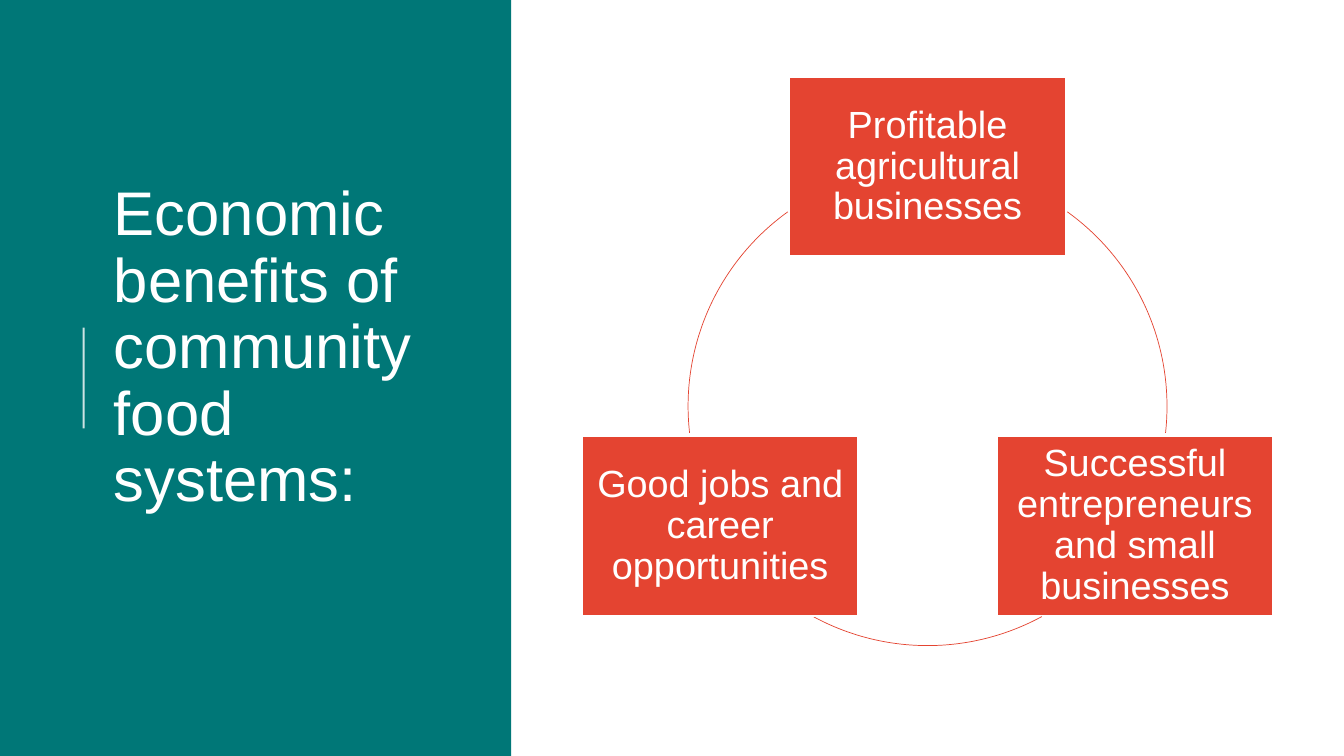
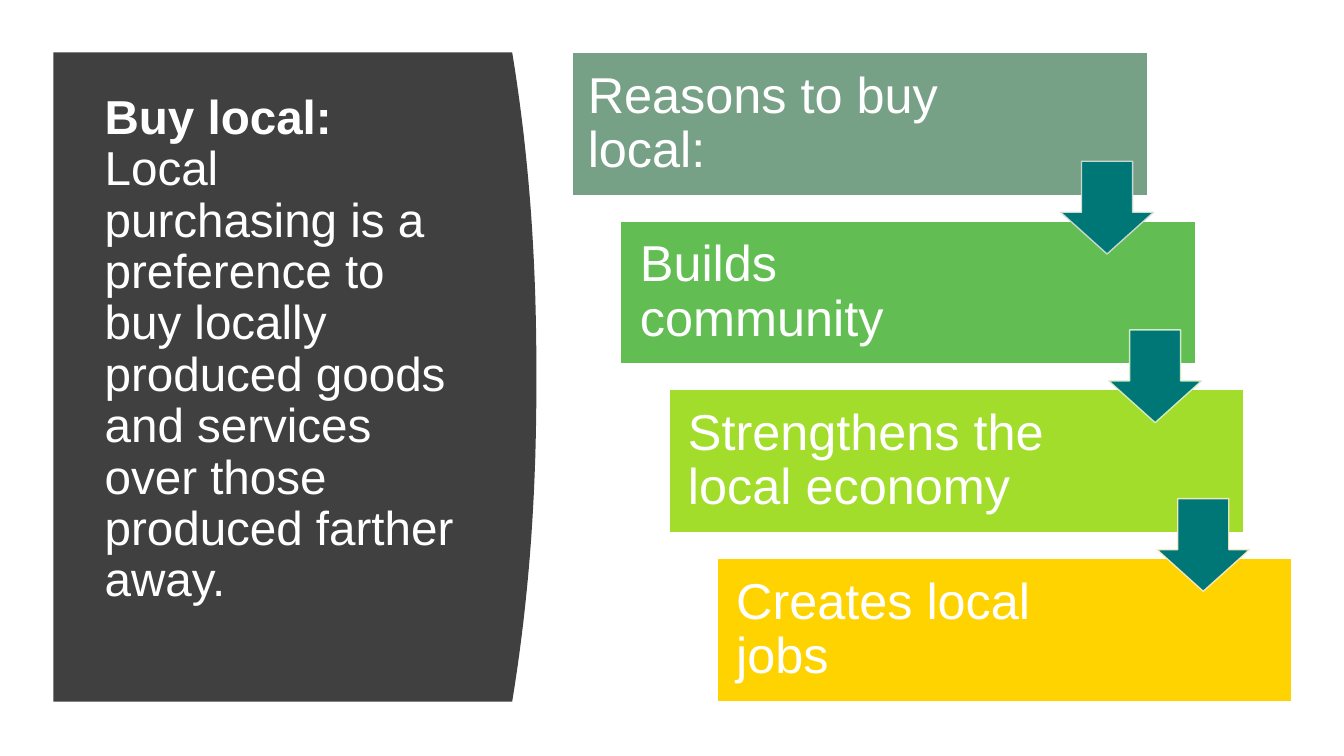
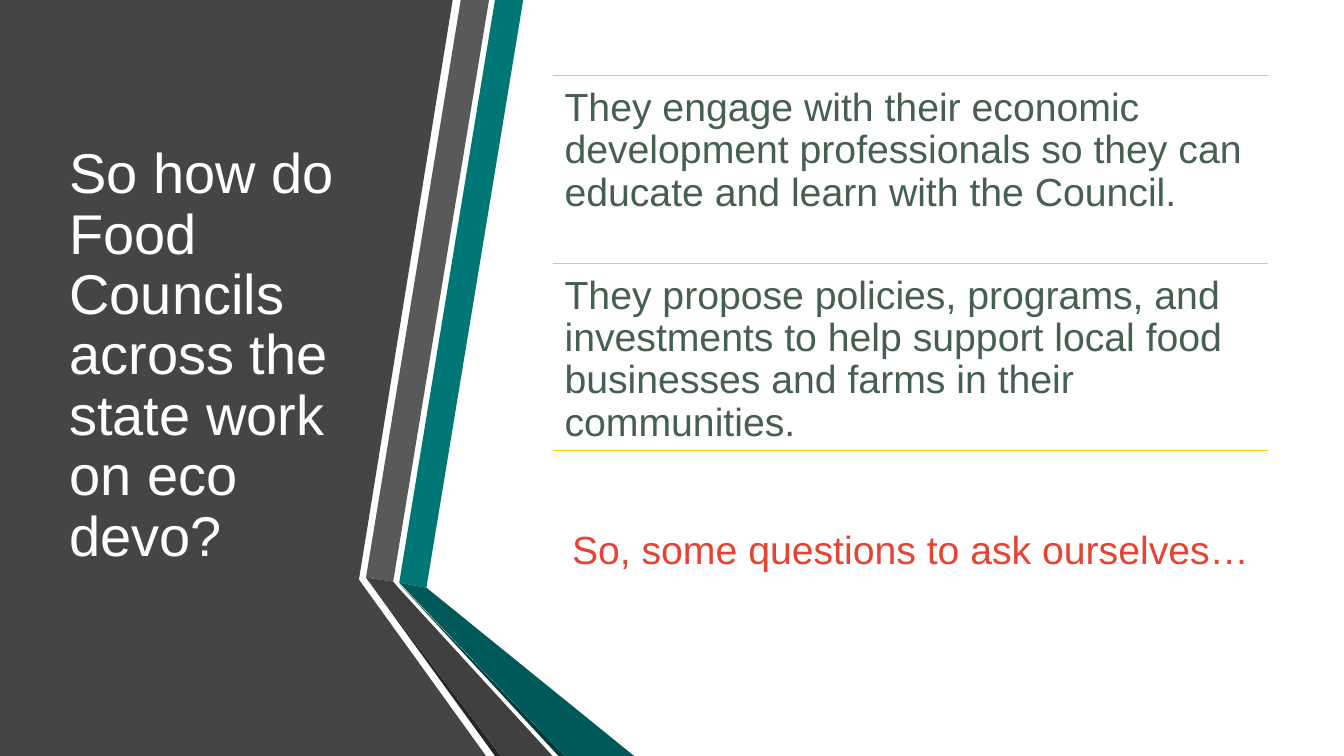
import math
import lxml.etree
import pptx
import pptx.dml.color
import pptx.enum.shapes
import pptx.enum.text
import pptx.oxml.ns
import pptx.util

SHAPE = pptx.enum.shapes.MSO_SHAPE
ANCHOR = pptx.enum.text.MSO_ANCHOR
ALIGN = pptx.enum.text.PP_ALIGN
WIDE, HIGH = 13.33, 7.5


class Theme:
    font = "Arial"
    white, teal, red, gold = "FFFFFF", "007777", "E44431", "FFD300"
    dark, slate, moss = "404040", "454545", "455F51"
    steps = ["77A186", "62BE52", "A1DD2A", gold]
    edges = ["D6E0D9", "E0F2CF", "FFEFCB"]
    cycle_size, step_size, point_size = 27, 36, 28
    spacing = 0.9


# Content
BENEFITS = {
    "title": "Economic benefits of community food systems:",
    "cycle": [
        "Profitable agricultural businesses",
        "Successful entrepreneurs and small businesses",
        "Good jobs and career opportunities",
    ],
}
LOCAL = {
    "title": [
        "Buy local:",
        "Local purchasing is a preference to buy locally produced goods "
        "and services over those produced farther away.",
    ],
    "steps": [
        "Reasons to buy local:",
        "Builds community",
        "Strengthens the local economy",
        "Creates local jobs",
    ],
}
COUNCILS = {
    "title": "So how do Food Councils across the state work on eco devo?",
    "points": [
        "They engage with their economic development professionals so they "
        "can educate and learn with the Council.",
        "They propose policies, programs, and investments to help support "
        "local food businesses and farms in their communities.",
    ],
    "close": "So, some questions to ask ourselves…",
}
RIBBONS = [
    (Theme.slate, [(0, 0), (4.49, 0), (3.56, 5.75), (4.82, HIGH), (0, HIGH)]),
    (Theme.teal, [(3.96, 5.78), (4.23, 5.83), (5.19, 0), (4.91, 0)]),
    ("595959", [(4.85, 0), (4.57, 0), (3.63, 5.73), (3.9, 5.77)]),
    ("262626", [(3.63, 5.73), (4.91, HIGH), (4.97, HIGH)]),
    ("003B3C", [(3.96, 5.79), (5.54, HIGH), (5.6, HIGH)]),
    ("005959", [(3.96, 5.78), (5.6, HIGH), (6.29, HIGH), (4.23, 5.83)]),
    (Theme.dark, [(3.63, 5.73), (4.97, HIGH), (5.48, HIGH), (3.95, 5.83), (3.9, 5.77)]),
]


def inch(*nums):
    return [pptx.util.Inches(num) for num in nums]


def rgb(code):
    return pptx.dml.color.RGBColor.from_string(code)


def stroke(item, color, width, alpha=100):
    item.line.color.rgb = rgb(color)
    item.line.width = pptx.util.Pt(width)
    if alpha < 100:
        tint = item.element.spPr.find(".//" + pptx.oxml.ns.qn("a:ln")).find(
            ".//" + pptx.oxml.ns.qn("a:srgbClr"))
        lxml.etree.SubElement(tint, pptx.oxml.ns.qn("a:alpha"), val=str(alpha * 1000))


def paint(item, fill):
    """Set a flat fill, or none, with no outline or shadow."""
    item.shadow.inherit = False
    if fill:
        item.fill.solid()
        item.fill.fore_color.rgb = rgb(fill)
    else:
        item.fill.background()
    item.line.fill.background()
    return item


def shape(slide, kind, box, fill):
    return paint(slide.shapes.add_shape(kind, *inch(*box)), fill)


def outline(slide, points, fill):
    first, *rest = [inch(*point) for point in points]
    maker = slide.shapes.build_freeform(*first, scale=1.0)
    maker.add_line_segments(rest, close=True)
    return paint(maker.convert_to_shape(), fill)


def rule(slide, start, end, color, width, alpha=100):
    line = slide.shapes.add_connector(
        pptx.enum.shapes.MSO_CONNECTOR.STRAIGHT, *inch(*start, *end))
    stroke(line, color, width, alpha)
    lxml.etree.SubElement(line.element.spPr, pptx.oxml.ns.qn("a:effectLst"))


def write(item, lines, size, color=Theme.white, inset=(0.1, 0.05, 0.1, 0.05),
          anchor=ANCHOR.MIDDLE, align=ALIGN.LEFT):
    """Fill a text frame; inset is left, top, right, bottom."""
    frame = item.text_frame
    frame.word_wrap = True
    frame.vertical_anchor = anchor
    (frame.margin_left, frame.margin_top,
     frame.margin_right, frame.margin_bottom) = inch(*inset)
    frame.text = "\n".join(lines)
    for para in frame.paragraphs:
        para.alignment = align
        para.line_spacing = Theme.spacing
        para.font.name = Theme.font
        para.font.size = pptx.util.Pt(size)
        para.font.color.rgb = rgb(color)
    return frame


def label(slide, box, lines, size, **style):
    return write(slide.shapes.add_textbox(*inch(*box)), lines, size, **style)


def benefits(slide):
    shape(slide, SHAPE.RECTANGLE, (0, 0, 5.07, HIGH), Theme.teal)
    label(slide, (1.03, 0.78, 3.69, 5.36), [BENEFITS["title"]], 44)
    rule(slide, (0.83, 4.25), (0.83, 3.25), Theme.white, 1.5, 80)

    mid_x, mid_y, radius = 9.2, 4.03, 2.375
    wide, high = 2.74, 1.78
    ring = (mid_x - radius, mid_y - radius, 2 * radius, 2 * radius)
    arcs = [(305.7, 6.4), (61.5, 118.5), (173.6, 234.3)]
    for i, (text, arc) in enumerate(zip(BENEFITS["cycle"], arcs)):
        angle = math.radians(120 * i - 90)
        left = mid_x + radius * math.cos(angle) - wide / 2
        top = mid_y + radius * math.sin(angle) - high / 2
        card = shape(slide, SHAPE.RECTANGLE, (left, top, wide, high), Theme.red)
        stroke(card, Theme.white, 1.5)
        write(card, [text], Theme.cycle_size, inset=(0.11,) * 4, align=ALIGN.CENTER)
        curve = shape(slide, SHAPE.ARC, ring, None)
        for n, degree in enumerate(arc):
            curve.adjustments[n] = degree * 0.6  # 60000ths of a degree over 100000
        stroke(curve, Theme.red, 0.5)


def local(slide):
    left, top, edge, bulge, high, cuts = 0.53, 0.52, 5.08, 0.24, 6.44, 40
    side = [(edge + bulge * (1 - abs(2 * n / cuts - 1) ** 2.2), top + high * n / cuts)
            for n in range(cuts + 1)]
    outline(slide, [(left, top), *side, (left, top + high)], Theme.dark)
    title = label(slide, (0.94, 1.11, 3.74, 4.73), LOCAL["title"], 34)
    title.paragraphs[0].font.bold = True

    wide, tall, text_wide = 5.7, 1.42, 3.9
    spots = [(5.68 + 0.477 * i, 0.52 + 1.673 * i) for i in range(len(LOCAL["steps"]))]
    for i, (spot, text) in enumerate(zip(spots, LOCAL["steps"])):
        step = shape(slide, SHAPE.RECTANGLE, (*spot, wide, tall), Theme.steps[i])
        stroke(step, Theme.white, 1)
        pad = 0.19 if i else 0.15
        write(step, [text], Theme.step_size,
              inset=(pad, 0.15, wide - text_wide - pad, 0.15))
    for (x, y), edge in zip(spots, Theme.edges):
        arrow = shape(slide, SHAPE.DOWN_ARROW, (x + 4.84, y + 1.08, 0.92, 0.92), Theme.teal)
        arrow.adjustments[0], arrow.adjustments[1] = 0.55, 0.45
        stroke(arrow, edge, 1, 90)


def councils(slide):
    for fill, points in RIBBONS:
        outline(slide, points, fill)
    label(slide, (0.59, 0.75, 3, 5.58), [COUNCILS["title"]], 40)

    left, top, wide, row, pad = 5.48, 0.75, 7.1, 1.86, 0.12
    rows = [(text, Theme.moss, pad, ALIGN.LEFT) for text in COUNCILS["points"]]
    rows.append((COUNCILS["close"], Theme.red, 1.28, ALIGN.CENTER))
    for i, (text, color, drop, align) in enumerate(rows):
        y = top + row * i
        rule(slide, (left, y), (left + wide, y), Theme.gold, 0.5)
        label(slide, (left, y, wide, row), [text], Theme.point_size, color=color,
              inset=(pad, drop, pad, pad), anchor=ANCHOR.TOP, align=align)


def main():
    deck = pptx.Presentation()
    deck.slide_width, deck.slide_height = inch(WIDE, HIGH)
    for build in (benefits, local, councils):
        build(deck.slides.add_slide(deck.slide_layouts[6]))
    deck.save("out.pptx")


if __name__ == "__main__":
    main()
